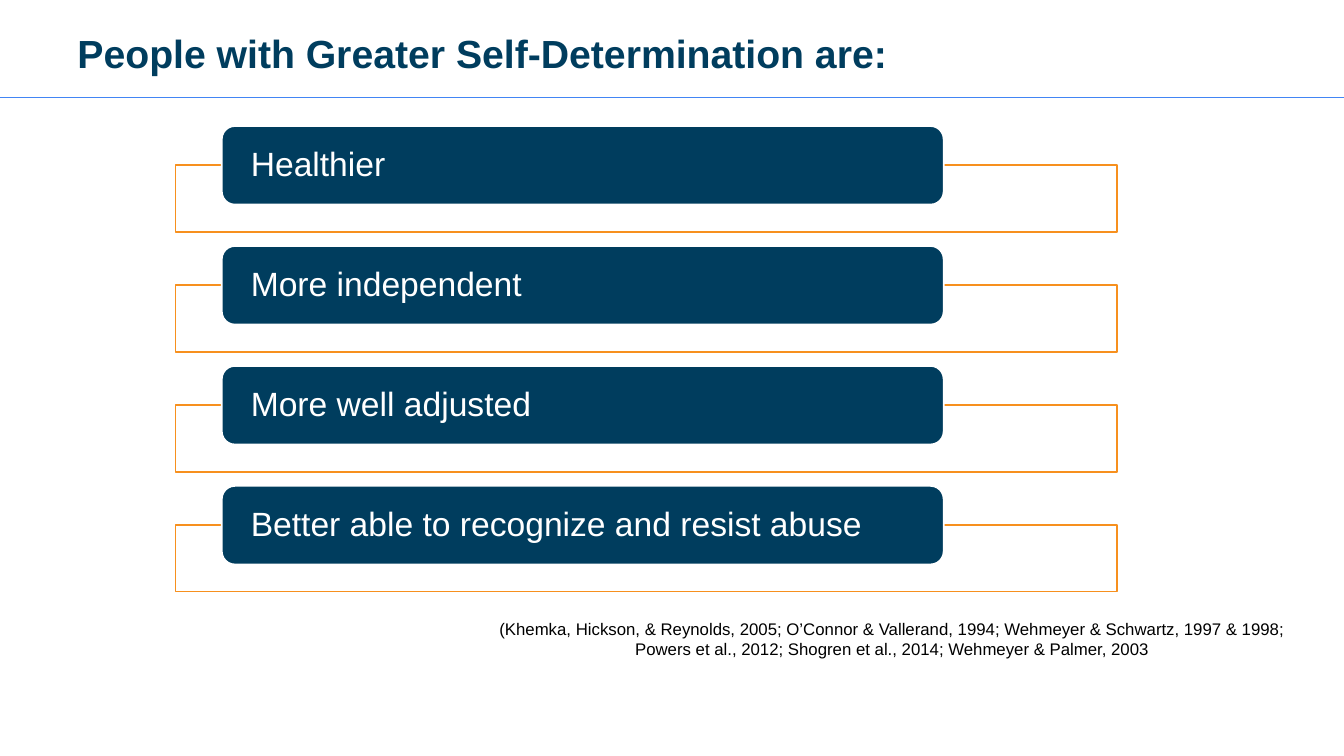
from pptx import Presentation
from pptx.dml.color import RGBColor
from pptx.enum.shapes import MSO_CONNECTOR, MSO_SHAPE
from pptx.enum.text import MSO_ANCHOR, PP_ALIGN
from pptx.oxml.ns import qn
from pptx.util import Inches, Pt
from lxml.etree import SubElement

NAVY, ORANGE, BLUE, WHITE, BLACK = "003D5E", "F7901E", "4285F4", "FFFFFF", "000000"
OUTCOMES = [
    "Healthier",
    "More independent",
    "More well adjusted",
    "Better able to recognize and resist abuse",
]
FIRST_TOP, ROW_STEP = 1.25, 1.19
CITATION = (
    "(Khemka, Hickson, & Reynolds, 2005; O’Connor & Vallerand, 1994; "
    "Wehmeyer & Schwartz, 1997 & 1998; Powers et al., 2012; "
    "Shogren et al., 2014; Wehmeyer & Palmer, 2003"
)


def color(hex_code):
    return RGBColor.from_string(hex_code)


class SlideBuilder:
    font_name = "Arial"

    def __init__(self, slide):
        self.shapes = slide.shapes

    def fill_frame(self, frame, text, size, text_color, bold=False, align=PP_ALIGN.LEFT,
                   anchor=MSO_ANCHOR.TOP, spacing=1.0):
        """Put one styled paragraph into a text frame."""
        frame.word_wrap = True
        frame.vertical_anchor = anchor
        paragraph = frame.paragraphs[0]
        paragraph.alignment = align
        paragraph.line_spacing = spacing
        run = paragraph.add_run()
        run.text = text
        run.font.name = self.font_name
        run.font.size = Pt(size)
        run.font.bold = bold
        run.font.color.rgb = color(text_color)

    def text(self, left, top, width, height, text, size, text_color, **style):
        box = self.shapes.add_textbox(*map(Inches, (left, top, width, height)))
        self.fill_frame(box.text_frame, text, size, text_color, **style)

    def panel(self, preset, left, top, width, height, fill, outline):
        panel = self.shapes.add_shape(preset, *map(Inches, (left, top, width, height)))
        panel.shadow.inherit = False
        panel.fill.solid()
        panel.fill.fore_color.rgb = color(fill)
        panel.line.color.rgb = color(outline)
        panel.line.width = Pt(1.25)
        return panel

    def rule(self, y, width, line_color):
        rule = self.shapes.add_connector(
            MSO_CONNECTOR.STRAIGHT, Inches(0), Inches(y), Inches(width), Inches(y))
        rule.line.color.rgb = color(line_color)
        rule.line.width = Pt(1)
        SubElement(rule._element.spPr, qn("a:effectLst"))

    def outcome(self, top, label):
        """Draw an open frame with a labelled bar across its upper edge."""
        self.panel(MSO_SHAPE.RECTANGLE, 1.74, top + 0.39, 9.34, 0.66, WHITE, ORANGE)
        bar = self.panel(MSO_SHAPE.ROUNDED_RECTANGLE, 2.2, top, 7.16, 0.78, NAVY, WHITE)
        frame = bar.text_frame
        # The rounded corners already inset the text by about 0.04 inches.
        frame.margin_left = frame.margin_right = Inches(0.25)
        frame.margin_top = frame.margin_bottom = 0
        self.fill_frame(frame, label, 24, WHITE, anchor=MSO_ANCHOR.MIDDLE, spacing=0.9)


def main():
    deck = Presentation()
    deck.slide_width, deck.slide_height = Inches(13.33), Inches(7.5)
    builder = SlideBuilder(deck.slides.add_slide(deck.slide_layouts[6]))

    builder.rule(0.97, 13.33, BLUE)
    builder.text(0.67, 0.29, 11.48, 0.52, "People with Greater Self-Determination are:",
                 28, NAVY, bold=True, anchor=MSO_ANCHOR.BOTTOM, spacing=0.85)
    for row, label in enumerate(OUTCOMES):
        builder.outcome(FIRST_TOP + row * ROW_STEP, label)
    builder.text(4.67, 6.09, 8.36, 0.5, CITATION, 12, BLACK, align=PP_ALIGN.CENTER)

    deck.save("out.pptx")


if __name__ == "__main__":
    main()
